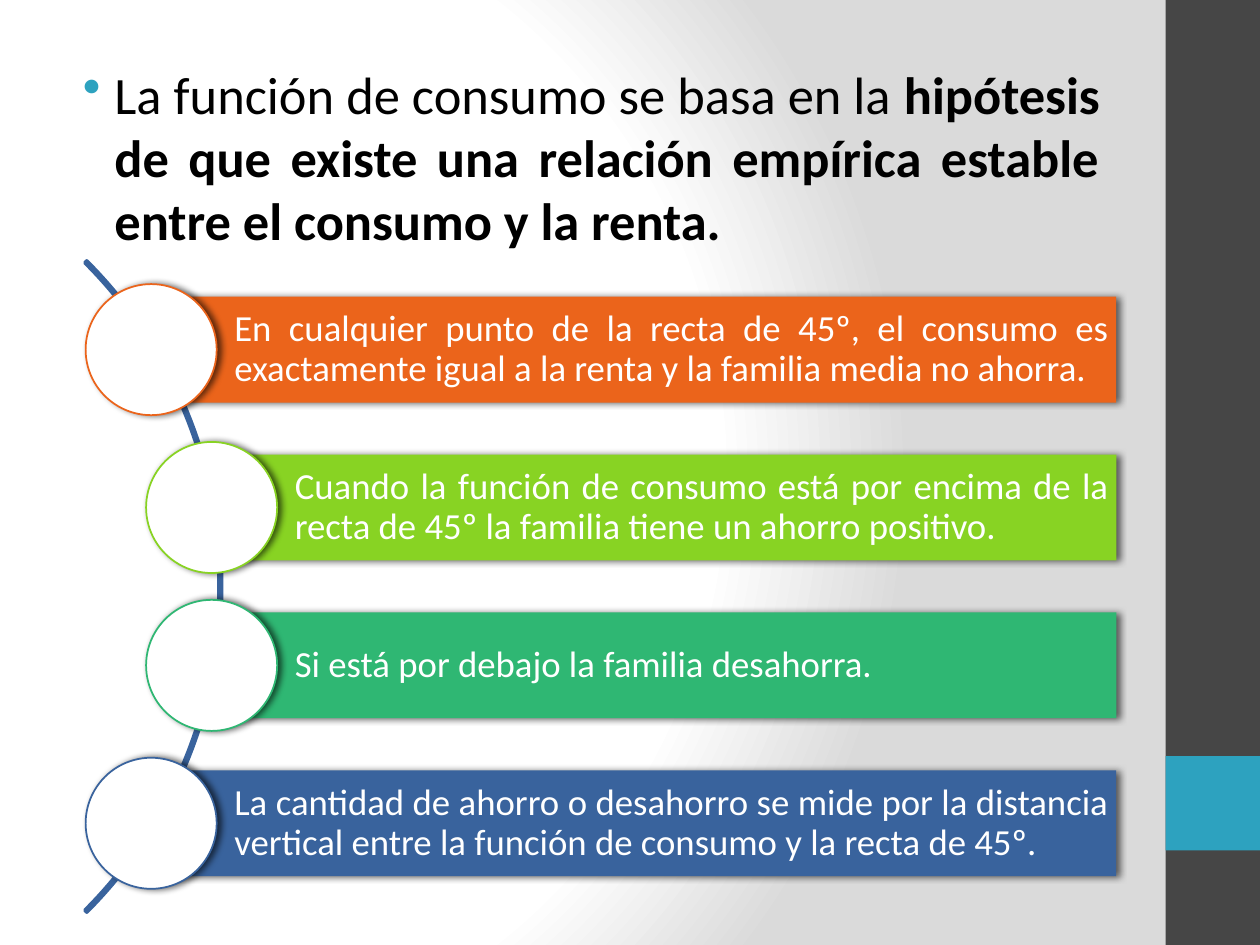
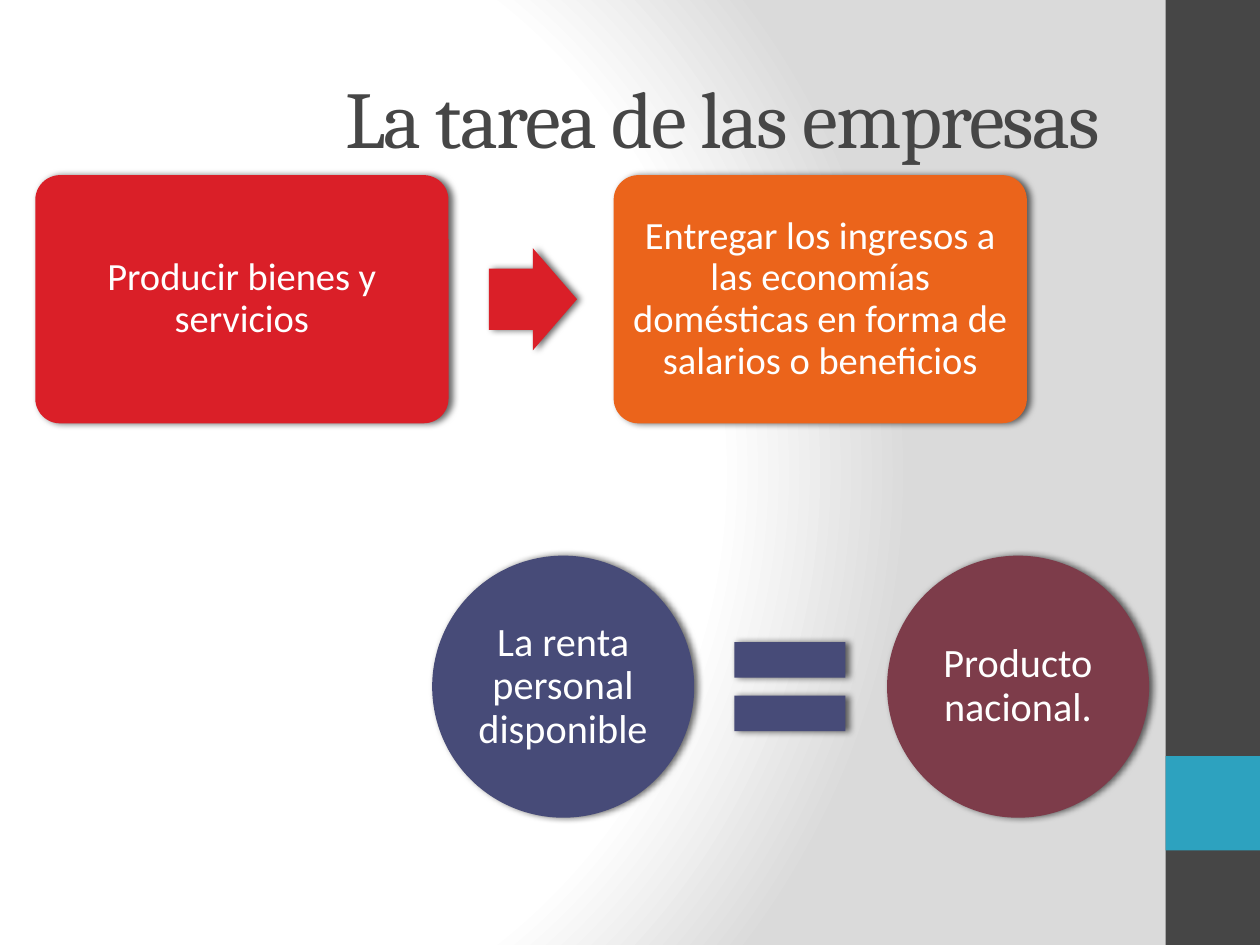
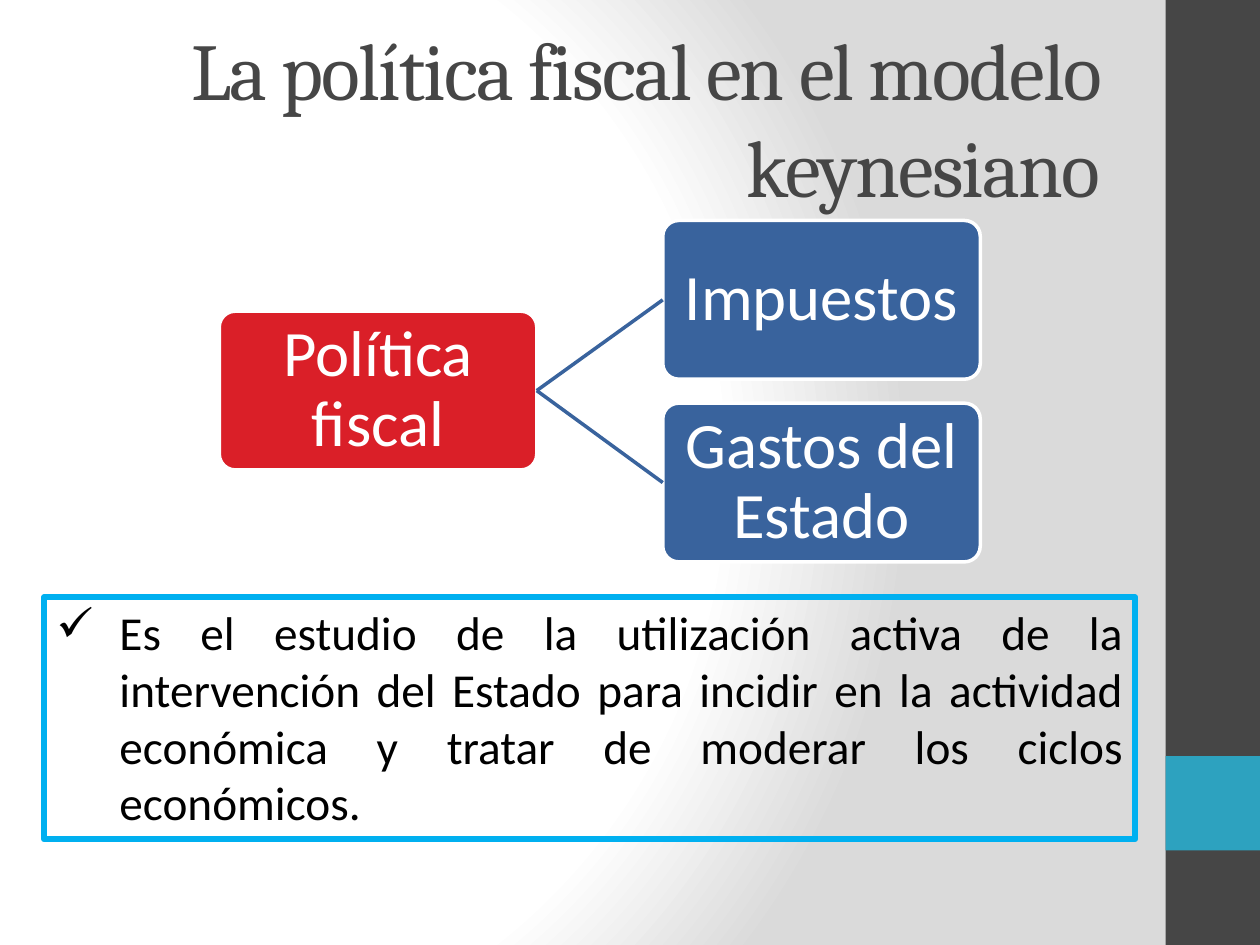
from lxml import etree
from pptx import Presentation
from pptx.dml.color import RGBColor
from pptx.enum.shapes import MSO_CONNECTOR as CONN, MSO_SHAPE as SHAPE
from pptx.enum.text import MSO_ANCHOR as ANCHOR, PP_ALIGN as ALIGN
from pptx.oxml import parse_xml
from pptx.oxml.ns import nsdecls, qn
from pptx.util import Inches, Pt

COLS, ROWS = 100, 75
CELL = Inches(0.1)

WHITE = RGBColor(0xFF, 0xFF, 0xFF)
BLACK = RGBColor(0, 0, 0)
GREY = RGBColor(0xDA, 0xDA, 0xDA)
DARK = RGBColor(0x46, 0x46, 0x46)
TEAL = RGBColor(0x2D, 0xA2, 0xBF)
SKY = RGBColor(0x00, 0xB0, 0xF0)
RED = RGBColor(0xDA, 0x1F, 0x28)
ORANGE = RGBColor(0xEB, 0x64, 0x1B)
LIME = RGBColor(0x88, 0xD3, 0x23)
GREEN = RGBColor(0x2F, 0xB7, 0x73)
BLUE = RGBColor(0x39, 0x63, 0x9D)
INDIGO = RGBColor(0x47, 0x4B, 0x78)
WINE = RGBColor(0x7D, 0x3C, 0x4A)


def cells(*counts):
    return [round(n * CELL) for n in counts]


def set_background(master):
    fill = master.background.fill
    fill.gradient()
    stops = "".join(
        f'<a:gs pos="{pos}000"><a:srgbClr val="{color}"/></a:gs>'
        for pos, color in ((0, WHITE), (75, WHITE), (100, GREY)))
    grad = master.element.find(".//" + qn("a:gradFill"))
    grad.getparent().replace(grad, parse_xml(
        f'<a:gradFill {nsdecls("a")} rotWithShape="1"><a:gsLst>{stops}</a:gsLst>'
        '<a:path path="circle"><a:fillToRect l="20000" t="50000" r="100000" b="50000"/>'
        '</a:path></a:gradFill>'))


def add_shadow(sp):
    sp._element.spPr.find(qn("a:effectLst")).append(parse_xml(
        f'<a:outerShdw {nsdecls("a")} blurRad="{Pt(4)}" dist="{Pt(2)}" dir="0" '
        'rotWithShape="0"><a:srgbClr val="000000"><a:alpha val="60000"/></a:srgbClr>'
        '</a:outerShdw>'))


def add_box(s, kind, at, fill=None, line=None, width=1, adj=(), shadow=False):
    sp = s.shapes.add_shape(kind, *cells(*at))
    sp.shadow.inherit = False
    if fill is None:
        sp.fill.background()
    else:
        sp.fill.solid()
        sp.fill.fore_color.rgb = fill
    if line is None:
        sp.line.fill.background()
    else:
        sp.line.color.rgb = line
        sp.line.width = Pt(width)
    for i, value in enumerate(adj):
        sp.adjustments[i] = value
    if shadow:
        add_shadow(sp)
    return sp


def add_bullet(p, char, indent, hang, color):
    pPr = p._p.get_or_add_pPr()
    pPr.set("marL", str(Inches(indent)))
    pPr.set("indent", str(-Inches(hang)))
    if color is not None:
        clr = etree.SubElement(pPr, qn("a:buClr"))
        etree.SubElement(clr, qn("a:srgbClr"), val=str(color))
    etree.SubElement(pPr, qn("a:buChar"), char=char)


def write(sp, text, size, font="Calibri", color=WHITE, align=ALIGN.CENTER,
          anchor=ANCHOR.MIDDLE, insets=(1, 0.5, 1, 0.5), leading=None,
          bold_tail="", spacing=None, bullet=None):
    tf = sp.text_frame
    tf.word_wrap = True
    tf.vertical_anchor = anchor
    tf.margin_left, tf.margin_top, tf.margin_right, tf.margin_bottom = cells(*insets)
    p = tf.paragraphs[0]
    p.alignment = align
    if leading:
        p.line_spacing = leading
    if bullet:
        add_bullet(p, *bullet)
    for part, bold in ((text, False), (bold_tail, True)):
        if part:
            r = p.add_run()
            r.text = part
            r.font.name, r.font.size, r.font.bold = font, Pt(size), bold
            r.font.color.rgb = color
            if spacing:
                r._r.get_or_add_rPr().set("spc", str(spacing * 100))


def add_node(s, kind, at, text, size, inset, **look):
    sp = add_box(s, kind, at, **look)
    write(sp, text, size, insets=(inset,) * 4, leading=0.9)
    return sp


def add_title(s, text):
    sp = s.shapes.add_textbox(*cells(5, 3, 83.3, 12.5))
    write(sp, text, 46, font="Cambria", color=DARK, align=ALIGN.RIGHT, spacing=-1)


def add_slide(prs, title=None):
    s = prs.slides.add_slide(prs.slide_layouts[6])
    add_box(s, SHAPE.RECTANGLE, (92.5, 0, 7.5, ROWS), DARK)
    add_box(s, SHAPE.RECTANGLE, (92.5, 60, 7.5, 7.5), TEAL)
    if title:
        add_title(s, title)
    return s


def add_arc_item(s, left, middle, color, text):
    height, diameter, right = 8.4, 10.4, 88.6
    bar = add_box(s, SHAPE.RECTANGLE,
                  (left, middle - height / 2, right - left, height), color, shadow=True)
    write(bar, text, 21, align=ALIGN.JUSTIFY, insets=(6.6, 0.6, 0.6, 0.6), leading=0.9)
    add_box(s, SHAPE.OVAL,
            (left - diameter / 2, middle - diameter / 2, diameter, diameter),
            WHITE, line=color, shadow=True)


def link(s, parent, child):
    c = s.shapes.add_connector(CONN.STRAIGHT, 0, 0, 0, 0)
    c.begin_connect(parent, 3)
    c.end_connect(child, 1)
    c.line.color.rgb = BLUE
    c.line.width = Pt(2)
    etree.SubElement(c._element.spPr, qn("a:effectLst"))


def consumption_slide(prs):
    s = add_slide(prs)
    body = s.shapes.add_textbox(*cells(4.3, 4.4, 84, 65.6))
    write(body, "La función de consumo se basa en la ", 30, color=BLACK,
          align=ALIGN.JUSTIFY, anchor=ANCHOR.TOP, bullet=("•", 0.38, 0.25, TEAL),
          bold_tail="hipótesis de que existe una relación empírica estable "
                    "entre el consumo y la renta.")
    add_box(s, SHAPE.BLOCK_ARC, (-55.5, 10, 73.1, 73.1), line=BLUE, width=2,
            adj=(189, 27, 0.003))
    items = (
        (12, ORANGE, "En cualquier punto de la recta de 45º, el consumo es "
                     "exactamente igual a la renta y la familia media no ahorra."),
        (16.8, LIME, "Cuando la función de consumo está por encima de la recta "
                     "de 45º la familia tiene un ahorro positivo."),
        (16.8, GREEN, "Si está por debajo la familia desahorra."),
        (12, BLUE, "La cantidad de ahorro o desahorro se mide por la distancia "
                   "vertical entre la función de consumo y la recta de 45º."))
    for i, (left, color, text) in enumerate(items):
        add_arc_item(s, left, 27.75 + 12.53 * i, color, text)


def companies_slide(prs):
    s = add_slide(prs, "La tarea de las empresas")
    tasks = (
        (2.8, RED, "Producir bienes y servicios"),
        (48.7, ORANGE, "Entregar los ingresos a las economías domésticas "
                       "en forma de salarios o beneficios"))
    for left, color, text in tasks:
        add_node(s, SHAPE.ROUNDED_RECTANGLE, (left, 13.9, 32.8, 19.7), text, 22, 0.9,
                 fill=color, adj=(0.1,), shadow=True)
    add_box(s, SHAPE.RIGHT_ARROW, (38.8, 19.7, 7, 8.1), RED, adj=(0.6, 0.5), shadow=True)
    terms = ((34.3, INDIGO, "La renta personal disponible"),
             (70.4, WINE, "Producto nacional."))
    for left, color, text in terms:
        add_node(s, SHAPE.OVAL, (left, 44.1, 20.8, 20.8), text, 23, 0.3,
                 fill=color, shadow=True)
    add_box(s, SHAPE.MATH_EQUAL, (56.7, 48.5, 12, 12), INDIGO, shadow=True)


def fiscal_slide(prs):
    s = add_slide(prs, "La política fiscal en el modelo keynesiano")

    def policy_node(left, top, color, text):
        return add_node(s, SHAPE.ROUNDED_RECTANGLE, (left, top, 25.2, 12.6), text, 37, 0.3,
                        fill=color, line=WHITE, width=2, adj=(0.1,))

    policy = policy_node(17.4, 24.7, RED, "Política fiscal")
    for top, text in ((17.5, "Impuestos"), (32, "Gastos del Estado")):
        link(s, policy, policy_node(52.6, top, BLUE, text))
    note = add_box(s, SHAPE.RECTANGLE, (3.5, 47.4, 86.6, 19.2), line=SKY, width=3.5)
    write(note, "Es el estudio de la utilización activa de la intervención del Estado "
                "para incidir en la actividad económica y tratar de moderar los ciclos "
                "económicos.", 27, color=BLACK, align=ALIGN.JUSTIFY, anchor=ANCHOR.TOP,
          bullet=("✓", 0.5, 0.5, None))


def main():
    prs = Presentation()
    prs.slide_width, prs.slide_height = cells(COLS, ROWS)
    set_background(prs.slide_master)
    consumption_slide(prs)
    companies_slide(prs)
    fiscal_slide(prs)
    prs.save("out.pptx")


if __name__ == "__main__":
    main()
